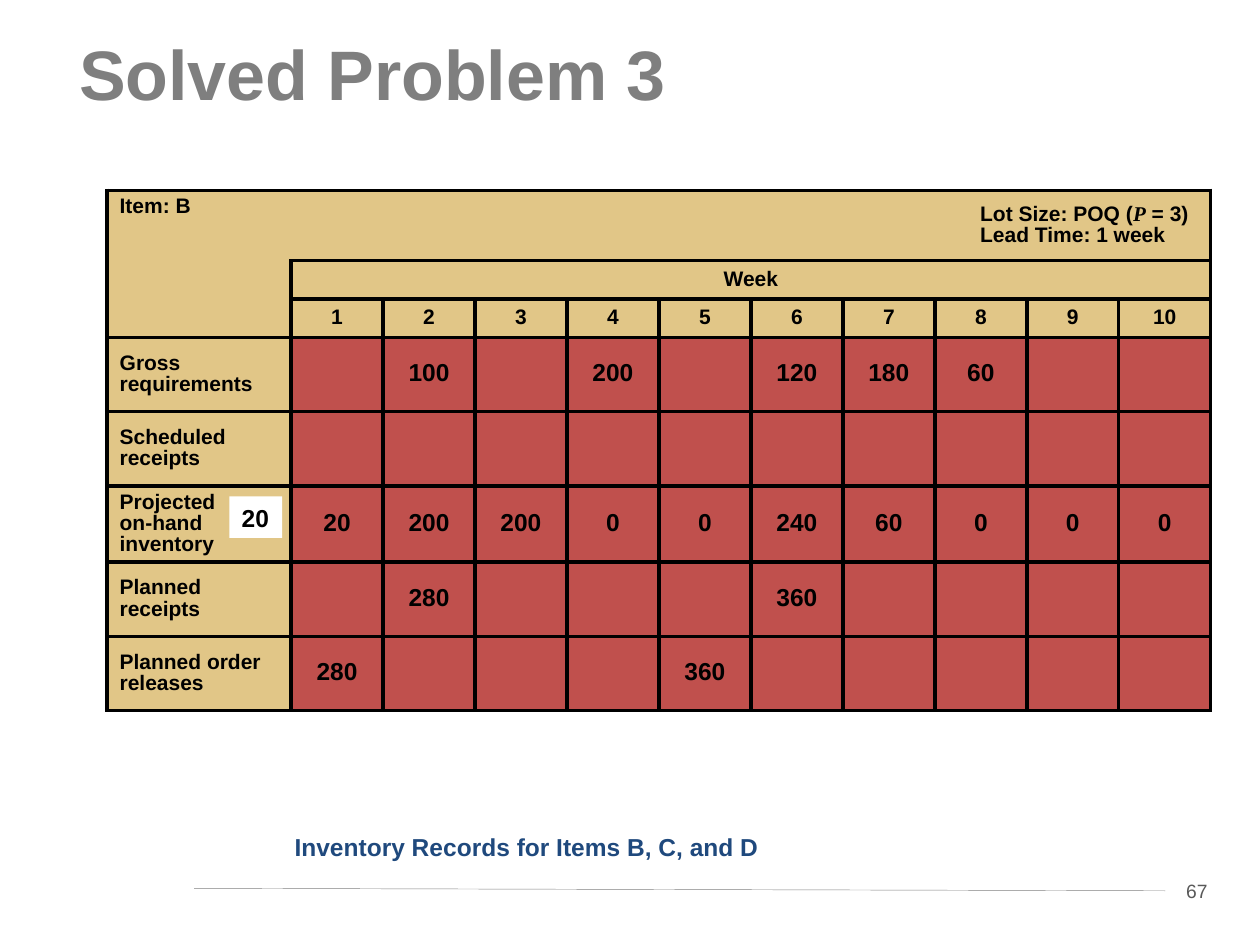
from dataclasses import dataclass

from lxml.etree import SubElement
from pptx import Presentation
from pptx.dml.color import RGBColor
from pptx.enum.shapes import MSO_CONNECTOR, MSO_SHAPE
from pptx.enum.text import MSO_ANCHOR, PP_ALIGN
from pptx.oxml.ns import qn
from pptx.util import Inches, Pt

SAND, BRICK, BLACK, WHITE = "E1C687", "C0504D", "000000", "FFFFFF"
BORDERS = {"L": "a:lnL", "R": "a:lnR", "T": "a:lnT", "B": "a:lnB"}
PLAIN_STYLE = "{2D5ABB26-0587-4C30-8999-92F81FD0307C}"


@dataclass
class Label:
    text: str
    left: float
    top: float
    width: float
    height: float
    size: float
    colour: str
    bold: bool = True
    wrap: bool = True
    fill: str = ""
    align: PP_ALIGN = PP_ALIGN.LEFT
    spacing: float = 1.0
    indent: float = 0.0
    top_margin: float = 0.05


@dataclass
class Record:
    name: str
    quantities: dict[int, str]


RECORDS = [
    Record("Gross requirements", {2: "100", 4: "200", 6: "120", 7: "180", 8: "60"}),
    Record("Scheduled receipts", {}),
    Record("Projected\von-hand\vinventory",
           dict(enumerate("20 200 200 0 0 240 60 0 0 0".split(), start=1))),
    Record("Planned receipts", {2: "280", 6: "360"}),
    Record("Planned order releases", {1: "280", 5: "360"}),
]
LABELS = [
    Label("Solved Problem 3", 0.53, 0.13, 8.94, 1.01, 40, "7F7F7F", top_margin=0.11),
    Label("Inventory Records for Items B, C, and D", 0.86, 6.58, 5.4, 0.32, 14, "1F497D",
          spacing=0.9, indent=1.38),
    Label("20", 1.82, 3.94, 0.42, 0.33, 14, BLACK, wrap=False, fill=WHITE),
    Label("67", 9.25, 6.93, 0.5, 0.29, 11, "595959", bold=False, fill=WHITE,
          align=PP_ALIGN.CENTER),
]


def colour_of(value: str) -> RGBColor:
    return RGBColor.from_string(value)


def style_span(span, size: float, colour: str, bold: bool = True) -> None:
    span.font.name = "Arial"
    span.font.size = Pt(size)
    span.font.bold = bold
    span.font.color.rgb = colour_of(colour)


def set_indent(para, inches: float) -> None:
    properties = para._p.get_or_add_pPr()
    properties.set("marL", str(Inches(inches)))
    properties.set("indent", "0")


def add_label(page, label: Label) -> None:
    area = [Inches(n) for n in (label.left, label.top, label.width, label.height)]
    if label.fill:
        box = page.shapes.add_shape(MSO_SHAPE.RECTANGLE, *area)
        box.shadow.inherit = False
        box.fill.solid()
        box.fill.fore_color.rgb = colour_of(label.fill)
        box.line.fill.background()
    else:
        box = page.shapes.add_textbox(*area)
    frame = box.text_frame
    frame.text = label.text
    frame.word_wrap = label.wrap
    frame.vertical_anchor = MSO_ANCHOR.TOP
    frame.margin_top = Inches(label.top_margin)
    para = frame.paragraphs[0]
    para.alignment = label.align
    para.line_spacing = label.spacing
    if label.indent:
        set_indent(para, label.indent)
    style_span(para.runs[0], label.size, label.colour, label.bold)


def add_border(cell, side: str) -> None:
    line = SubElement(cell._tc.get_or_add_tcPr(), qn(BORDERS[side]), w=str(Pt(2.25)))
    fill = SubElement(line, qn("a:solidFill"))
    SubElement(fill, qn("a:srgbClr"), val=BLACK)


def fill_cell(cell, text: str, fill: str = SAND, size: float = 12,
              align: PP_ALIGN = PP_ALIGN.CENTER, sides: str = "LRTB") -> None:
    cell.text_frame.text = text
    cell.vertical_anchor = MSO_ANCHOR.MIDDLE
    for side in sides:
        add_border(cell, side)
    cell.fill.solid()
    cell.fill.fore_color.rgb = colour_of(fill)
    for para in cell.text_frame.paragraphs:
        para.alignment = align
        para.line_spacing = 0.9
        for span in para.runs:
            style_span(span, size, BLACK)
        for line_break in para._p.findall(qn("a:br")):
            SubElement(line_break, qn("a:rPr"), sz=str(size * 100))
        if not para.runs:
            SubElement(para._p, qn("a:endParaRPr"), sz=str(size * 100))


def add_lot_details(cell) -> None:
    fill_cell(cell, "Lot Size: POQ (\nLead Time: 1 week", align=PP_ALIGN.LEFT, sides="RTB")
    lot_size = cell.text_frame.paragraphs[0]
    for text in ("P", " = 3)"):
        span = lot_size.add_run()
        span.text = text
        style_span(span, 12, BLACK)
    symbol = lot_size.runs[1].font
    symbol.name = "Times New Roman"
    symbol.italic = True
    for para in cell.text_frame.paragraphs:
        set_indent(para, 0.99)


def add_inventory_table(page) -> None:
    widths = [1.46] + [0.73] * 10
    heights = [0.56, 0.28, 0.29] + [0.59] * len(RECORDS)
    frame = page.shapes.add_table(len(heights), len(widths), Inches(0.85), Inches(1.51),
                                  Inches(sum(widths)), Inches(sum(heights)))
    table = frame.table
    table._tbl.tblPr.find(qn("a:tableStyleId")).text = PLAIN_STYLE
    table.first_row = table.horz_banding = False
    for column, width in zip(table.columns, widths):
        column.width = Inches(width)
    for row, height in zip(table.rows, heights):
        row.height = Inches(height)

    table.cell(0, 0).merge(table.cell(0, 6))
    table.cell(0, 7).merge(table.cell(0, 10))
    table.cell(1, 1).merge(table.cell(1, 10))
    fill_cell(table.cell(0, 0), "Item: B", align=PP_ALIGN.LEFT, sides="LT")
    table.cell(0, 0).vertical_anchor = MSO_ANCHOR.TOP
    add_lot_details(table.cell(0, 7))
    fill_cell(table.cell(1, 0), "", sides="LR")
    fill_cell(table.cell(1, 1), "Week")
    fill_cell(table.cell(2, 0), "", sides="LRB")
    for week in range(1, 11):
        fill_cell(table.cell(2, week), str(week))
    for row, record in enumerate(RECORDS, start=3):
        fill_cell(table.cell(row, 0), record.name, align=PP_ALIGN.LEFT)
        for week in range(1, 11):
            fill_cell(table.cell(row, week), record.quantities.get(week, ""), BRICK, 14)


def add_footer_line(page) -> None:
    line = page.shapes.add_connector(MSO_CONNECTOR.STRAIGHT, Inches(1.54), Inches(7.05),
                                     Inches(9.25), Inches(7.07))
    line.line.color.rgb = colour_of("808080")
    line.line.width = Pt(0.25)
    SubElement(line._element.spPr, qn("a:effectLst"))


def main() -> None:
    """Build the inventory record slide for item B."""
    deck = Presentation()
    deck.slide_width, deck.slide_height = Inches(10), Inches(7.5)
    page = deck.slides.add_slide(deck.slide_layouts[6])
    add_footer_line(page)
    add_inventory_table(page)
    for label in LABELS:
        add_label(page, label)
    deck.save("out.pptx")


if __name__ == "__main__":
    main()
